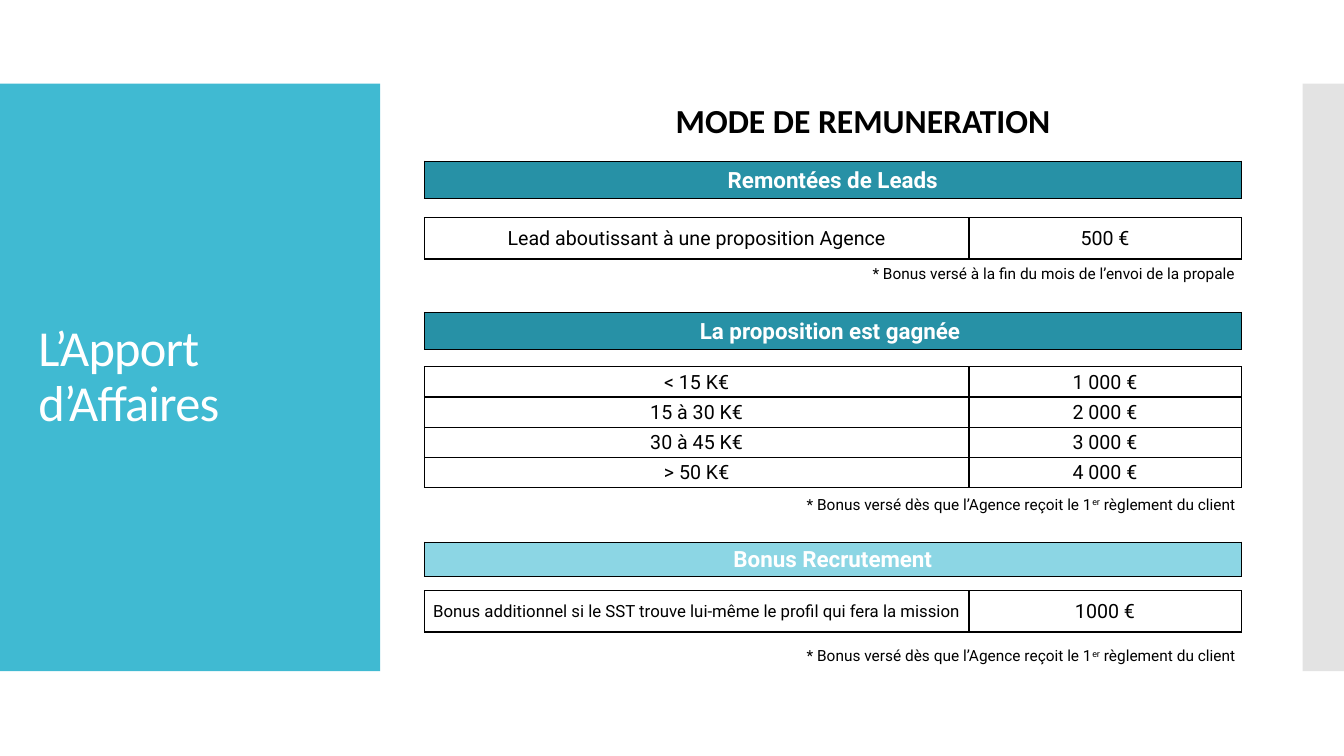
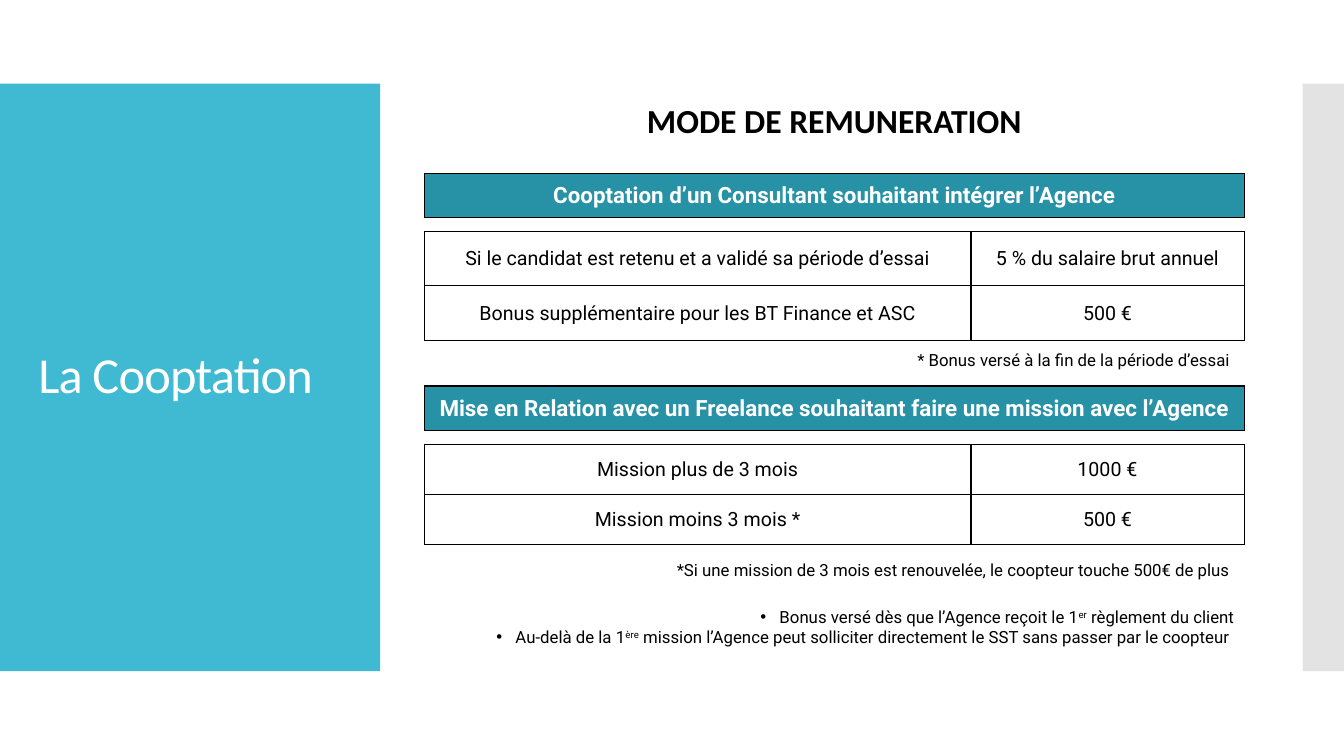
from lxml.etree import SubElement
from pptx import Presentation
from pptx.dml.color import RGBColor
from pptx.enum.shapes import MSO_SHAPE as Shape
from pptx.enum.text import MSO_ANCHOR as Anchor, MSO_AUTO_SIZE as AutoSize, PP_ALIGN as Align
from pptx.oxml.ns import qn
from pptx.shapes.shapetree import SlideShapes
from pptx.util import Pt

PX = 9144
BLACK = RGBColor(0x00, 0x00, 0x00)
WHITE = RGBColor(0xFF, 0xFF, 0xFF)
SKY = RGBColor(0x40, 0xBA, 0xD2)
TEAL = RGBColor(0x27, 0x91, 0xA6)
PALE = RGBColor(0x8C, 0xD6, 0xE4)
GREY = RGBColor(0xC8, 0xC8, 0xC8)
TITLE_FONT = "Calibri"
BODY_FONT = "Roboto"
LEFT = 421
PAID_BY_CLIENT = "Bonus versé dès que l’Agence reçoit le 1^er^ règlement du client"


def px(*lengths):
    return [length * PX for length in lengths]


class Deck:
    def __init__(self):
        self.deck = Presentation()
        self.deck.slide_width, self.deck.slide_height = px(1333, 750)
        self.layout = self.deck.slide_layouts[5]
        self.page = None
        title = self.layout.placeholders[0]
        title.left, title.top, title.width, title.height = px(28, 123, 322, 503)
        self.band(0, 377, SKY)
        self.band(1292, 41, GREY, 50)

    def band(self, left, width, color, opacity=100):
        shapes = SlideShapes(self.layout.shapes._spTree, self.layout)
        box = shapes.add_shape(Shape.RECTANGLE, *px(left, 83, width, 583))
        box.shadow.inherit = False
        box.line.fill.background()
        box.fill.solid()
        box.fill.fore_color.rgb = color
        if opacity < 100:
            tint = box._element.spPr.find(".//" + qn("a:srgbClr"))
            SubElement(tint, qn("a:alpha")).set("val", str(opacity * 1000))

    def style(self, para, size, color=BLACK, font=BODY_FONT, bold=False, align=Align.CENTER):
        para.alignment = align
        para.font.size = Pt(size)
        para.font.name = font
        para.font.bold = bold
        para.font.color.rgb = color

    def add_page(self, title):
        self.page = self.deck.slides.add_slide(self.layout)
        frame = self.page.shapes.title.text_frame
        frame.text = title
        frame.vertical_anchor = Anchor.MIDDLE
        frame.auto_size = AutoSize.NONE
        para = frame.paragraphs[0]
        para.line_spacing = 0.9
        self.style(para, 36, WHITE, TITLE_FONT, align=Align.LEFT)
        para.font._element.set("spc", "-60")

    def text_box(self, left, top, width, height):
        box = self.page.shapes.add_textbox(*px(left, top, width, height))
        box.text_frame.word_wrap = True
        box.text_frame.auto_size = AutoSize.SHAPE_TO_FIT_TEXT
        return box.text_frame

    def heading(self, width):
        para = self.text_box(LEFT, 94, width, 50).paragraphs[0]
        para.text = "MODE DE REMUNERATION"
        self.style(para, 24, font=TITLE_FONT, bold=True)

    def note(self, para, text, size, spacing=1.5, bullet=False):
        for index, part in enumerate(text.split("^")):
            span = para.add_run()
            span.text = part
            if index % 2:
                span.font._element.set("baseline", "30000")
        if bullet:
            props = para._p.get_or_add_pPr()
            props.set("marL", str(19 * PX))
            props.set("indent", str(-19 * PX))
            SubElement(props, qn("a:buFont")).set("typeface", "Arial")
            SubElement(props, qn("a:buChar")).set("char", "•")
        para.line_spacing = spacing
        self.style(para, size, align=Align.RIGHT)

    def footnote(self, left, top, width, height, text, size):
        self.note(self.text_box(left, top, width, height).paragraphs[0], text, size)

    def borders(self, cell, sides):
        props = cell._tc.get_or_add_tcPr()
        for side in "LRTB":
            line = SubElement(props, qn("a:ln" + side))
            line.set("w", str(Pt(1)))
            if side in sides:
                fill = SubElement(line, qn("a:solidFill"))
                SubElement(fill, qn("a:srgbClr")).set("val", str(BLACK))
            else:
                SubElement(line, qn("a:noFill"))

    def cell(self, cell, text, size=14, color=BLACK, bold=False, fill=None, sides="LRTB"):
        cell.margin_left, cell.margin_top, cell.margin_right, cell.margin_bottom = px(1, 1, 1, 0)
        cell.vertical_anchor = Anchor.MIDDLE
        self.borders(cell, sides)
        if fill is None:
            cell.fill.background()
        else:
            cell.fill.solid()
            cell.fill.fore_color.rgb = fill
        para = cell.text_frame.paragraphs[0]
        if text:
            para.text = text
            self.style(para, size, color, bold=bold)
        else:
            para._p.get_or_add_endParaRPr().set("sz", "100")

    def bonus_table(self, top, width, header, gap, rows, fill=TEAL):
        header_height, header_text = header
        heights = [header_height, gap] + [row[0] for row in rows]
        frame = self.page.shapes.add_table(
            len(heights), 2, *px(LEFT, top, width, sum(heights)))
        table = frame.table
        table.first_row = table.horz_banding = False
        table.columns[0].width, table.columns[1].width = px(width * 2 // 3, width // 3)
        for row, height in zip(table.rows, px(*heights)):
            row.height = height
        for index in (0, 1):
            table.cell(index, 0).merge(table.cell(index, 1))
        for column, text in enumerate((header_text, "")):
            self.cell(table.cell(0, column), text, 16, WHITE, True, fill)
            self.cell(table.cell(1, column), "", sides="TB")
        for index, (_, label, amount, *label_size) in enumerate(rows, 2):
            self.cell(table.cell(index, 0), label, *label_size)
            self.cell(table.cell(index, 1), amount)


def referral_page(deck):
    deck.add_page("L’Apport\vd’Affaires")
    deck.heading(870)
    deck.bonus_table(160, 810, (37, "Remontées de Leads"), 19, [
        (41, "Lead aboutissant à une proposition Agence", "500 €"),
    ])
    deck.bonus_table(310, 810, (37, "La proposition est gagnée "), 17, [
        (30, "< 15 K€", "1 000 €"),
        (30, "15 à 30 K€", "2 000 €"),
        (30, "30 à 45 K€", "3 000 €"),
        (30, "> 50 K€", "4 000 €"),
    ])
    deck.bonus_table(538, 810, (34, "Bonus Recrutement"), 14, [
        (41, "Bonus additionnel si le SST trouve lui-même le profil qui fera la mission",
         "1000 €", 12),
    ], PALE)
    for top, text in (
        (248, "* Bonus versé à la fin du mois de l’envoi de la propale "),
        (477, f"* {PAID_BY_CLIENT} "),
        (627, f"* {PAID_BY_CLIENT} "),
    ):
        deck.footnote(436, top, 803, 38, text, 11)


def cooptation_page(deck):
    deck.add_page("La Cooptation")
    deck.heading(813)
    deck.bonus_table(172, 813, (44, "Cooptation d’un Consultant souhaitant intégrer l’Agence"), 14, [
        (53, "Si le candidat est retenu et a validé sa période d’essai",
         "5 % du salaire brut annuel"),
        (55, "Bonus supplémentaire pour les BT Finance et ASC", "500 €"),
    ])
    deck.bonus_table(383, 813, (
        44, "Mise en Relation avec un Freelance souhaitant faire une mission avec l’Agence"), 14, [
        (50, "Mission plus de 3 mois", "1000 €"),
        (49, "Mission moins 3 mois *", "500 €"),
    ])
    deck.footnote(LEFT, 332, 813, 40, "* Bonus versé à la fin de la période d’essai ", 12)
    frame = deck.text_box(LEFT, 540, 813, 108)
    renewal = frame.paragraphs[0]
    deck.note(renewal, "*Si une mission de 3 mois est renouvelée, le coopteur touche 500€ de plus ", 12)
    renewal.space_after = Pt(12)
    deck.note(frame.add_paragraph(), PAID_BY_CLIENT, 12, bullet=True)
    deck.note(
        frame.add_paragraph(),
        "Au-delà de la 1^ère^ mission l’Agence peut solliciter directement le SST "
        "sans passer par le coopteur ",
        12, spacing=1.0, bullet=True)


def main():
    deck = Deck()
    referral_page(deck)
    cooptation_page(deck)
    deck.deck.save("out.pptx")


if __name__ == "__main__":
    main()
